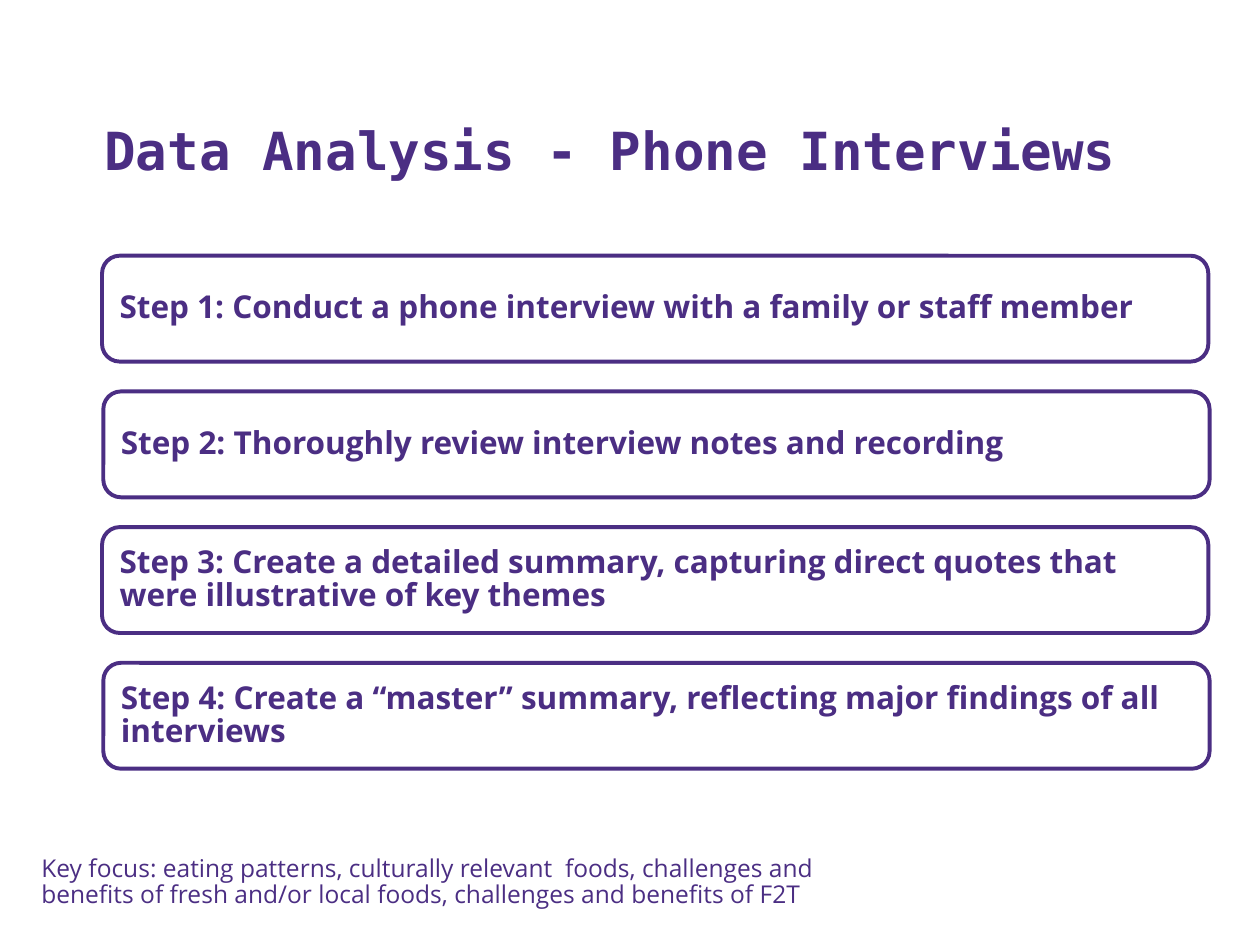
from dataclasses import dataclass

from pptx import Presentation
from pptx.dml.color import RGBColor
from pptx.enum.shapes import MSO_SHAPE
from pptx.enum.text import MSO_ANCHOR, PP_ALIGN
from pptx.shapes.autoshape import Shape
from pptx.slide import Slide
from pptx.util import Inches, Pt

PURPLE = RGBColor(0x4B, 0x2E, 0x83)
WHITE = RGBColor(0xFF, 0xFF, 0xFF)
HEADING_FONT = "DejaVu Sans Mono"
BODY_FONT = "Open Sans"

STEP_LEFT = 0.81
STEP_TOP = 2.03
STEP_PITCH = 1.077
STEP_WIDTH = 8.78
STEP_HEIGHT = 0.84
EVEN_STEP_SHIFT = 0.01


@dataclass(frozen=True)
class Box:
    left: float
    top: float
    width: float
    height: float

    def lengths(self) -> tuple:
        return tuple(Inches(n) for n in (self.left, self.top, self.width, self.height))


@dataclass(frozen=True)
class TextStyle:
    font: str
    size: int
    bold: bool
    anchor: MSO_ANCHOR
    vertical_inset: float = 0.1
    line_spacing: float = 0.88


TITLE_STYLE = TextStyle(HEADING_FONT, 30, True, MSO_ANCHOR.BOTTOM, 0.05, 1.0)
STEP_STYLE = TextStyle(BODY_FONT, 18, True, MSO_ANCHOR.MIDDLE)
FOCUS_STYLE = TextStyle(BODY_FONT, 14, False, MSO_ANCHOR.TOP)

STEPS = [
    "Conduct a phone interview with a family or staff member",
    "Thoroughly review interview notes and recording",
    "Create a detailed summary, capturing direct quotes that were illustrative of key themes",
    "Create a “master” summary, reflecting major findings of all interviews",
]


def write_text(shape: Shape, text: str, style: TextStyle) -> None:
    frame = shape.text_frame
    frame.word_wrap = True
    frame.vertical_anchor = style.anchor
    frame.margin_left = frame.margin_right = Inches(0.1)
    frame.margin_top = frame.margin_bottom = Inches(style.vertical_inset)
    paragraph = frame.paragraphs[0]
    paragraph.alignment = PP_ALIGN.LEFT
    paragraph.line_spacing = style.line_spacing
    run = paragraph.add_run()
    run.text = text
    run.font.name = style.font
    run.font.size = Pt(style.size)
    run.font.bold = style.bold
    run.font.color.rgb = PURPLE


def add_text(slide: Slide, box: Box, text: str, style: TextStyle) -> None:
    write_text(slide.shapes.add_textbox(*box.lengths()), text, style)


def add_step(slide: Slide, index: int, text: str) -> None:
    box = Box(
        STEP_LEFT + EVEN_STEP_SHIFT * (index % 2),
        STEP_TOP + STEP_PITCH * index,
        STEP_WIDTH,
        STEP_HEIGHT,
    )
    shape = slide.shapes.add_shape(MSO_SHAPE.ROUNDED_RECTANGLE, *box.lengths())
    shape.shadow.inherit = False
    shape.fill.solid()
    shape.fill.fore_color.rgb = WHITE
    shape.line.color.rgb = PURPLE
    shape.line.width = Pt(2.25)
    write_text(shape, f"Step {index + 1}: {text}", STEP_STYLE)


def main() -> None:
    presentation = Presentation()
    presentation.slide_width = Inches(10)
    presentation.slide_height = Inches(7.5)
    slide = presentation.slides.add_slide(presentation.slide_layouts[6])

    add_text(slide, Box(0.73, 0.41, 8.95, 1.08), "Data Analysis - Phone Interviews", TITLE_STYLE)
    for index, text in enumerate(STEPS):
        add_step(slide, index, text)
    add_text(
        slide,
        Box(0.23, 6.7, 7.02, 0.8),
        "Key focus: eating patterns, culturally relevant  foods, challenges and "
        "benefits of fresh and/or local foods, challenges and benefits of F2T",
        FOCUS_STYLE,
    )
    presentation.save("out.pptx")


if __name__ == "__main__":
    main()
